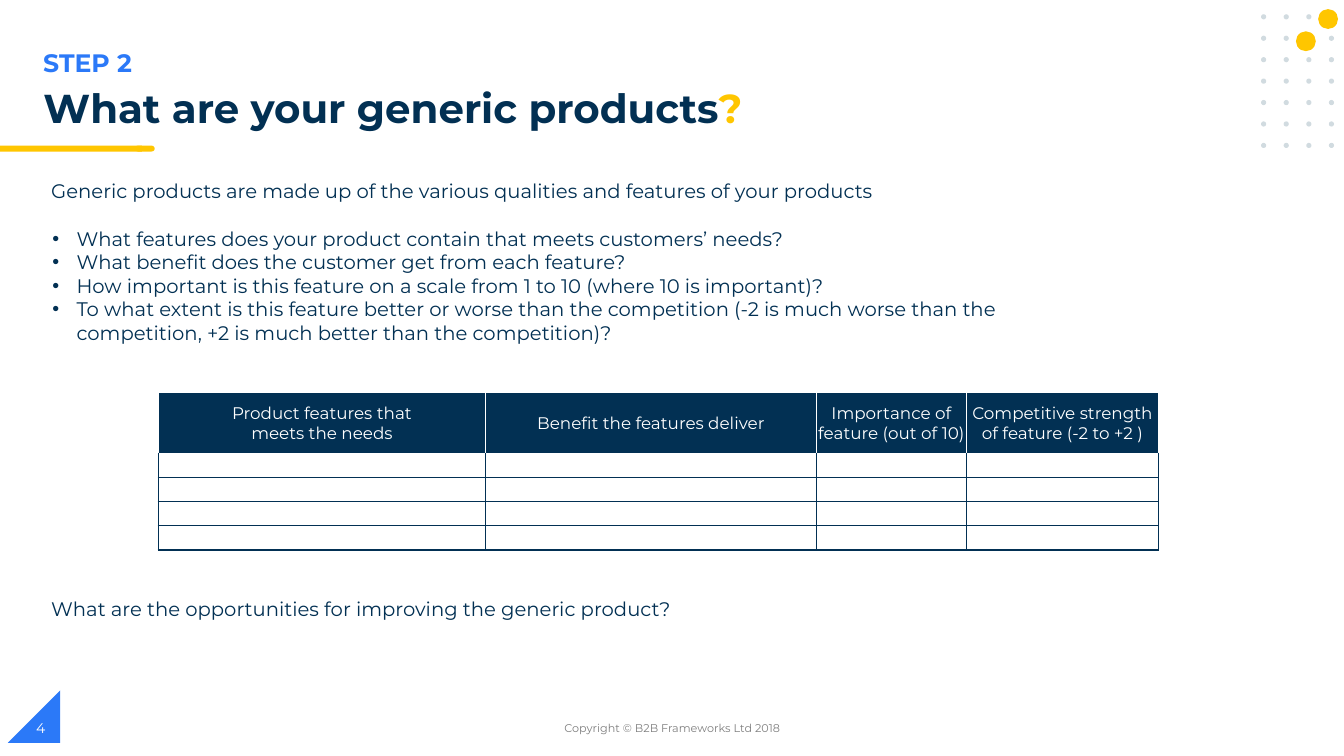
from lxml import etree
from pptx import Presentation
from pptx.dml.color import RGBColor
from pptx.enum.shapes import MSO_SHAPE
from pptx.enum.text import MSO_ANCHOR, MSO_AUTO_SIZE, PP_ALIGN
from pptx.oxml.ns import qn
from pptx.util import Cm, Pt

OVAL, RECT = MSO_SHAPE.OVAL, MSO_SHAPE.RECTANGLE
CAP, WEDGE = MSO_SHAPE.FLOWCHART_TERMINATOR, MSO_SHAPE.RIGHT_TRIANGLE
TOP, MIDDLE = MSO_ANCHOR.TOP, MSO_ANCHOR.MIDDLE
LEFT, CENTER = PP_ALIGN.LEFT, PP_ALIGN.CENTER
FIXED = MSO_AUTO_SIZE.NONE
FONT = "Montserrat"
NAVY, BLUE, GOLD, WHITE = "023053", "2B79F8", "FFC600", "FFFFFF"
GREY, PALE = "7F7F7F", "D1DBE0"

BULLETS = [
    "What features does your product contain that meets customers’ needs?",
    "What benefit does the customer get from each feature?",
    "How important is this feature on a scale from 1 to 10 (where 10 is important)?",
    "To what extent is this feature better or worse than the competition "
    "(-2 is much worse than the competition, +2 is much better than the competition)?",
]
HEADS = [
    "Product features that\nmeets the needs",
    "Benefit the features deliver",
    "Importance of feature (out of 10)",
    "Competitive strength of feature (-2 to +2 )",
]
WIDTHS = [8.25, 8.33, 3.79, 4.83]
HEIGHTS = [1.54] + [0.61] * 4


def color(code):
    """Turn a hex string into a colour."""
    return RGBColor.from_string(code)


def style(font, size, code, bold=False):
    """Set typeface, size, colour and weight."""
    font.name, font.size, font.bold = FONT, Pt(size), bold
    font.color.rgb = color(code)


def write(par, text, size=14, code=NAVY, bold=False, align=LEFT, bullet=False, gap=0):
    """Fill a paragraph with formatted text."""
    par.text = text
    par.alignment = align
    if gap:
        par.space_before = Pt(gap)
    if bullet:
        props = par._p.get_or_add_pPr()
        props.set("marL", str(Cm(0.64)))
        props.set("indent", str(Cm(-0.61)))
        tint = etree.SubElement(props, qn("a:buClr"))
        etree.SubElement(tint, qn("a:srgbClr")).set("val", NAVY)
        etree.SubElement(props, qn("a:buFont")).set("typeface", "Arial")
        etree.SubElement(props, qn("a:buChar")).set("char", "•")
    for run in par.runs:
        style(run.font, size, code, bold)


def label(slide, text, left, top, width, height, anchor=TOP, **fmt):
    """Add a wrapped text box and return its frame."""
    frame = slide.shapes.add_textbox(Cm(left), Cm(top), Cm(width), Cm(height)).text_frame
    frame.word_wrap = True
    frame.vertical_anchor = anchor
    write(frame.paragraphs[0], text, **fmt)
    return frame


def shape(slide, kind, left, top, width, height, code):
    """Add a plain filled shape."""
    item = slide.shapes.add_shape(kind, Cm(left), Cm(top), Cm(width), Cm(height))
    item.shadow.inherit = False
    item.fill.solid()
    item.fill.fore_color.rgb = color(code)
    item.line.fill.background()
    return item


def decor(slide):
    """Draw the corner wedge, dot grid and title rule."""
    wedge = shape(slide, WEDGE, 0.2, 17.4, 1.32, 1.32, BLUE)
    wedge._element.spPr.find(qn("a:xfrm")).set("flipH", "1")
    for row in range(7):
        for col in range(4):
            shape(slide, OVAL, 31.78 + 0.57 * col, 0.36 + 0.54 * row, 0.13, 0.13, PALE)
    for left, top in ((33.22, 0.23), (32.66, 0.79)):
        shape(slide, OVAL, left, top, 0.5, 0.5, GOLD)
    shape(slide, CAP, 3.4, 3.67, 0.5, 0.15, GOLD)
    shape(slide, RECT, 0, 3.67, 3.58, 0.15, GOLD)


def heading(slide):
    """Place and format the title."""
    title = slide.shapes.title
    title.left, title.top, title.width, title.height = Cm(0.84), Cm(2.08), Cm(18.75), Cm(1.42)
    frame = title.text_frame
    frame.auto_size = FIXED
    frame.word_wrap = True
    frame.vertical_anchor = MIDDLE
    par = frame.paragraphs[0]
    write(par, "What are your generic products", size=28.8, bold=True)
    par.line_spacing = 0.9
    mark = par.add_run()
    mark.text = "?"
    style(mark.font, 28.8, GOLD, True)


def border(cell, **sides):
    """Draw the cell borders, one colour a side."""
    props = cell._tc.get_or_add_tcPr()
    for spot, (side, code) in enumerate(sides.items()):
        line = etree.Element(qn(f"a:ln{side}"), w=str(Pt(1)))
        fill = etree.SubElement(line, qn("a:solidFill"))
        etree.SubElement(fill, qn("a:srgbClr")).set("val", code)
        props.insert(spot, line)


def grid(slide):
    """Add the feature table with empty rows to fill in."""
    table = slide.shapes.add_table(
        len(HEIGHTS), len(WIDTHS), Cm(3.99), Cm(9.88), Cm(sum(WIDTHS)), Cm(sum(HEIGHTS))
    ).table
    table.first_row = table.horz_banding = False
    for col, width in zip(table.columns, WIDTHS):
        col.width = Cm(width)
    for row, height in enumerate(HEIGHTS):
        table.rows[row].height = Cm(height)
        for col, head in enumerate(HEADS):
            cell = table.cell(row, col)
            cell.margin_left = cell.margin_right = cell.margin_top = Cm(0.03)
            cell.margin_bottom = 0
            cell.vertical_anchor = MIDDLE
            cell.fill.solid()
            cell.fill.fore_color.rgb = color(WHITE if row else NAVY)
            edge = NAVY if row else WHITE
            border(cell, L=edge, R=edge, T=NAVY if row > 1 else WHITE, B=edge)
            par = cell.text_frame.paragraphs[0]
            if row:
                etree.SubElement(par._p, qn("a:endParaRPr")).set("sz", "1000")
            else:
                write(par, head, size=12, code=WHITE, align=CENTER)


def main():
    """Build and save the slide."""
    deck = Presentation()
    deck.slide_width, deck.slide_height = Cm(33.87), Cm(19.05)
    slide = deck.slides.add_slide(deck.slide_layouts[5])
    decor(slide)
    label(slide, "STEP 2", 0.84, 1.07, 17, 1.02, size=18, code=BLUE, bold=True)
    heading(slide)
    intro = "Generic products are made up of the various qualities and features of your products"
    body = label(slide, intro, 1.04, 4.39, 26.92, 4.45)
    for spot, text in enumerate(BULLETS):
        write(body.add_paragraph(), text, bullet=True, gap=0 if spot else 17)
    grid(slide)
    ask = "What are the opportunities for improving the generic product?"
    label(slide, ask, 1.04, 14.91, 22.94, 0.86)
    label(slide, "Copyright © B2B Frameworks Ltd 2018", 11.23, 17.83, 11.43, 1.02,
          anchor=MIDDLE, size=8, code=GREY, align=CENTER)
    label(slide, "4", 0.66, 17.83, 7.62, 1.02, anchor=MIDDLE, size=10, code=WHITE)
    deck.save("out.pptx")


if __name__ == "__main__":
    main()
